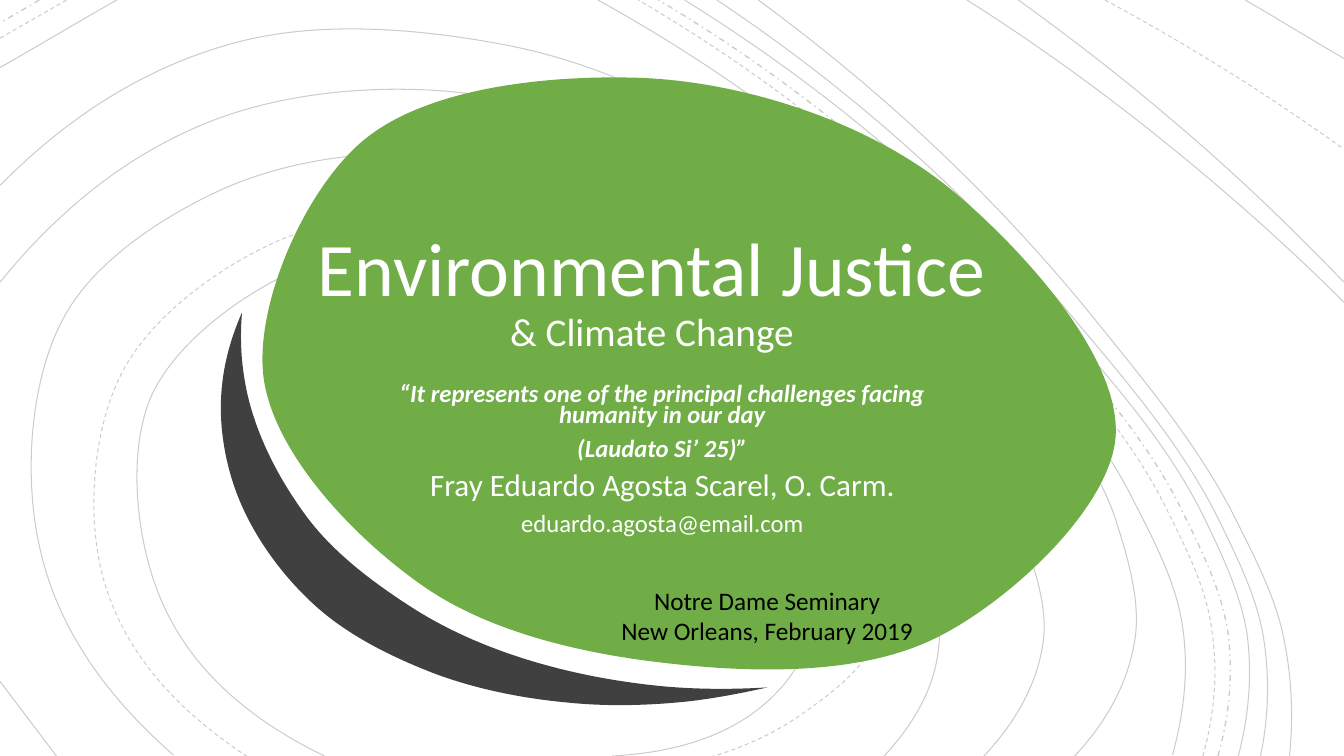
from itertools import pairwise

from lxml import etree
from pptx import Presentation
from pptx.dml.color import RGBColor
from pptx.enum.dml import MSO_LINE
from pptx.enum.text import MSO_ANCHOR, PP_ALIGN
from pptx.oxml.ns import qn
from pptx.util import Pt

PX = 9144  # EMU per px, 100 px to the inch
DASH, DASH_DOT, SOLID = MSO_LINE.DASH, MSO_LINE.DASH_DOT, MSO_LINE.SOLID
CENTER = PP_ALIGN.CENTER
TOP, BOTTOM = MSO_ANCHOR.TOP, MSO_ANCHOR.BOTTOM
FONT = "Calibri"
COLORS = {
    "green": "70AD47",
    "charcoal": "404040",
    "white": "FFFFFF",
    "black": "000000",
}


def smooth_curve(knots):
    """Return Bezier points, a start and three per curve, through the knots."""
    knots = [complex(*knot) for knot in knots]
    gaps = [abs(end - start) for start, end in pairwise(knots)]
    slopes = [(end - start) / abs(end - start) for start, end in pairwise(knots)]
    inner = [
        (slopes[i] * gaps[i + 1] + slopes[i + 1] * gaps[i]) / (gaps[i] + gaps[i + 1])
        for i in range(len(gaps) - 1)
    ]
    ends = inner or slopes
    tangents = [2 * slopes[0] - ends[0], *inner, 2 * slopes[-1] - ends[-1]]
    points = knots[:1]
    for i, gap in enumerate(gaps):
        points += [knots[i] + tangents[i] * gap / 3,
                   knots[i + 1] - tangents[i + 1] * gap / 3,
                   knots[i + 1]]
    return [(round(point.real), round(point.imag)) for point in points]


def draw_curves(shapes, points, close=False):
    """Draw a chain of Bezier curves: a start, then three points per curve."""
    builder = shapes.build_freeform(*points[0], scale=PX)
    builder.add_line_segments(points[1:], close=close)
    shape = builder.convert_to_shape()
    shape.shadow.inherit = False
    segments = list(shape.element.iter(qn("a:lnTo")))
    for first in range(0, len(segments), 3):
        curve = etree.Element(qn("a:cubicBezTo"))
        segments[first].addprevious(curve)
        for segment in segments[first:first + 3]:
            curve.append(segment[0])
            segment.getparent().remove(segment)
    return shape


presentation = Presentation()
presentation.slide_width = 1333 * PX
presentation.slide_height = 750 * PX
slide = presentation.slides.add_slide(presentation.slide_layouts[6])
slide.background.fill.solid()
slide.background.fill.fore_color.rgb = RGBColor.from_string(COLORS["white"])

# Contour lines behind the egg: dash and knots, from the inside out
contours = [
    (SOLID, [(607, 750), (775, 682), (825, 529), (684, 351), (480, 248),
             (294, 268), (151, 391), (162, 600), (322, 750)]),
    (DASH, [(705, 751), (796, 708), (867, 638), (874, 533), (817, 440), (651, 290),
            (443, 209), (263, 245), (122, 368), (104, 579), (246, 751)]),
    (SOLID, [(876, 751), (931, 643), (899, 521), (738, 315), (412, 153),
             (220, 188), (68, 307), (39, 541), (172, 749)]),
    (SOLID, [(975, 751), (1035, 634), (1007, 513), (838, 306), (458, 92),
             (205, 122), (0, 280)]),
    (SOLID, [(1065, 751), (1126, 632), (1106, 514), (944, 307), (498, 44),
             (231, 43), (0, 184)]),
    (SOLID, [(0, 676), (56, 750)]),
    (SOLID, [(1333, 300), (1154, 140), (959, 0)]),
    (SOLID, [(1333, 280), (1167, 123), (1010, 0)]),
    (DASH, [(1096, 0), (1218, 71), (1333, 148)]),
    (SOLID, [(1235, 0), (1333, 58)]),
]

# Lines at the top left corner run parallel
for reach, dash in ((116, SOLID), (66, DASH), (39, DASH_DOT)):
    contours.append((dash, [(reach, 0), (0, round(reach * 0.58))]))

# Lines on the right are blends between three of them
inner_line = [(1163, 749), (1173, 622), (1125, 498), (963, 287), (593, 0)]
middle_line = [(1228, 751), (1237, 630), (1194, 513), (1046, 312), (679, 0)]
outer_line = [(1279, 750), (1273, 632), (1228, 520), (1090, 322), (752, 0)]
for start_line, end_line, share, dash in (
    (inner_line, middle_line, 0, SOLID),
    (inner_line, middle_line, 0.46, DASH),
    (inner_line, middle_line, 0.7, DASH_DOT),
    (middle_line, outer_line, 0, SOLID),
    (middle_line, outer_line, 0.44, SOLID),
    (middle_line, outer_line, 1, SOLID),
):
    contours.append((dash, [
        (x + (end_x - x) * share, y + (end_y - y) * share)
        for (x, y), (end_x, end_y) in zip(start_line, end_line)
    ]))

contour_group = slide.shapes.add_group_shape()
for dash, knots in contours:
    contour = draw_curves(contour_group.shapes, smooth_curve(knots))
    contour.fill.background()
    contour.line.width = Pt(1 if dash == DASH_DOT else 0.75)
    contour.line.dash_style = dash
    contour.line.color.rgb = RGBColor.from_string(COLORS["black"])
    line_color = contour.element.find(".//" + qn("a:ln")).find(".//" + qn("a:srgbClr"))
    etree.SubElement(line_color, qn("a:alpha")).set("val", "20000")

# The crescent joins two arcs at sharp tips; the egg is smooth all round
crescent_inside = [(240, 310), (243, 379), (303, 511), (409, 603), (659, 681), (761, 682)]
crescent_outside = [(761, 682), (681, 696), (563, 697), (433, 669), (315, 603),
                    (235, 490), (219, 405), (240, 310)]
crescent = smooth_curve(crescent_inside) + smooth_curve(crescent_outside)[1:]
egg_knots = [(261, 371), (355, 144), (626, 77), (942, 187),
             (1106, 438), (932, 631), (662, 658), (422, 583)]
egg = smooth_curve(egg_knots[-1:] + egg_knots + egg_knots[:2])[3:-3]
for points, color in ((crescent, "charcoal"), (egg, "green")):
    shape = draw_curves(slide.shapes, points, close=True)
    shape.fill.solid()
    shape.fill.fore_color.rgb = RGBColor.from_string(COLORS[color])
    shape.line.fill.background()

# Text boxes: place, anchor, colour, line spacing, space before, paragraphs of lines
text_boxes = [
    ((266, 175, 761, 182), BOTTOM, "white", 0.9, 0, [
        [("Environmental Justice", 54, False), ("& Climate Change", 28, False)],
    ]),
    ((351, 378, 612, 166), TOP, "white", 0.7, 10, [
        [("“It represents one of the principal challenges facing humanity in our day",
          17.6, True)],
        [("(Laudato Si’ 25)”", 17.6, True)],
        [("Fray Eduardo Agosta Scarel, O. Carm.", 22.2, False)],
        [("eduardo.agosta@email.com", 17.6, False)],
    ]),
    ((606, 576, 310, 71), TOP, "black", 1.0, 0, [
        [("Notre Dame Seminary", 18, False)],
        [("New Orleans, February 2019", 18, False)],
    ]),
]
for place, anchor, color, line_spacing, space_before, paragraphs in text_boxes:
    frame = slide.shapes.add_textbox(*(length * PX for length in place)).text_frame
    frame.word_wrap = True
    frame.vertical_anchor = anchor
    for index, lines in enumerate(paragraphs):
        paragraph = frame.add_paragraph() if index else frame.paragraphs[0]
        paragraph.alignment = CENTER
        paragraph.line_spacing = line_spacing
        paragraph.space_before = Pt(space_before if index else 0)
        for number, (text, size, emphasis) in enumerate(lines):
            if number:
                paragraph.add_line_break()
            run = paragraph.add_run()
            run.text = text
            run.font.name = FONT
            run.font.size = Pt(size)
            run.font.bold = run.font.italic = emphasis
            run.font.color.rgb = RGBColor.from_string(COLORS[color])

presentation.save("out.pptx")
